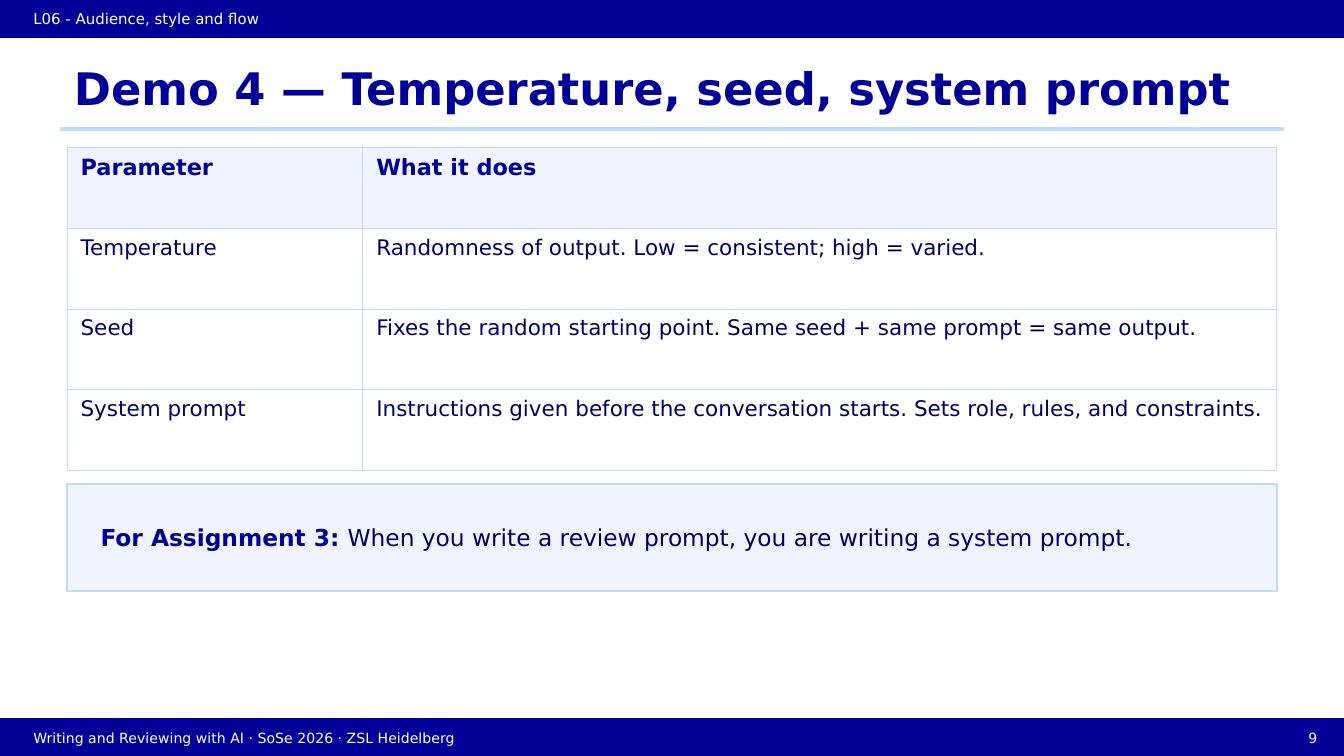
import pptx
import pptx.dml.color
import pptx.enum.shapes
import pptx.enum.text
import pptx.oxml
import pptx.oxml.ns
import pptx.util
from pptx.util import Inches

RGBColor = pptx.dml.color.RGBColor
PP_ALIGN = pptx.enum.text.PP_ALIGN
MIDDLE = pptx.enum.text.MSO_ANCHOR.MIDDLE

NAVY = RGBColor(0x00, 0x00, 0x99)
INK = RGBColor(0x00, 0x00, 0x66)
SKY = RGBColor(0xBF, 0xDB, 0xFE)
PALE = RGBColor(0xF0, 0xF4, 0xFF)
WHITE = RGBColor(0xFF, 0xFF, 0xFF)

ROWS = [
    ("Parameter", "What it does"),
    ("Temperature", "Randomness of output. Low = consistent; high = varied."),
    ("Seed", "Fixes the random starting point. Same seed + same prompt = same output."),
    ("System prompt", "Instructions given before the conversation starts. "
                      "Sets role, rules, and constraints."),
]


class Deck:
    font = "DejaVu Sans"

    def __init__(self, width, height):
        self.prs = pptx.Presentation()
        self.prs.slide_width = Inches(width)
        self.prs.slide_height = Inches(height)
        self.s = self.prs.slides.add_slide(self.prs.slide_layouts[5])

    def style(self, font, size, color, bold=False):
        font.name = self.font
        font.size = pptx.util.Pt(size)
        font.color.rgb = color
        font.bold = bold

    def title(self, x, y, w, h, text, size):
        sp = self.s.shapes.title
        sp.left, sp.top, sp.width, sp.height = map(Inches, (x, y, w, h))
        tf = sp.text_frame
        tf.text = text
        tf.word_wrap = True
        tf.auto_size = pptx.enum.text.MSO_AUTO_SIZE.NONE
        tf.vertical_anchor = MIDDLE
        p = tf.paragraphs[0]
        p.alignment = PP_ALIGN.LEFT
        self.style(p.font, size, NAVY, True)

    def rect(self, x, y, w, h, fill, line):
        sp = self.s.shapes.add_shape(
            pptx.enum.shapes.MSO_SHAPE.RECTANGLE, *map(Inches, (x, y, w, h)))
        sp.shadow.inherit = False
        sp.fill.solid()
        sp.fill.fore_color.rgb = fill
        sp.line.color.rgb = line
        sp.line.width = pptx.util.Pt(1)

    def text(self, x, y, w, h, runs, size, align=PP_ALIGN.LEFT):
        tf = self.s.shapes.add_textbox(*map(Inches, (x, y, w, h))).text_frame
        tf.word_wrap = True
        tf.vertical_anchor = MIDDLE
        p = tf.paragraphs[0]
        p.alignment = align
        for text, color, bold in runs:
            r = p.add_run()
            r.text = text
            self.style(r.font if len(runs) > 1 else p.font, size, color, bold)

    def borders(self, cell, color, points):
        tcPr = cell._tc.get_or_add_tcPr()
        for i, side in enumerate(("lnL", "lnR", "lnT", "lnB")):
            ln = pptx.oxml.parse_xml(
                f'<a:{side} {pptx.oxml.ns.nsdecls("a")} w="{pptx.util.Pt(points)}">'
                f'<a:solidFill><a:srgbClr val="{color}"/></a:solidFill></a:{side}>')
            tcPr.insert(i, ln)

    def table(self, x, y, widths, row_height, rows):
        tbl = self.s.shapes.add_table(
            len(rows), len(widths), Inches(x), Inches(y),
            Inches(sum(widths)), Inches(row_height * len(rows))).table
        for col, width in zip(tbl.columns, widths):
            col.width = Inches(width)
        for i, row in enumerate(rows):
            head = i == 0
            for j, text in enumerate(row):
                cell = tbl.cell(i, j)
                cell.text = text
                cell.fill.solid()
                cell.fill.fore_color.rgb = PALE if head else WHITE
                self.borders(cell, SKY, 0.5)
                self.style(cell.text_frame.paragraphs[0].font,
                           12 if head else 11.5, NAVY if head else INK, head)


def main():
    deck = Deck(10, 10 * 9 / 16)
    deck.title(0.45, 0.35, 9.1, 0.6, "Demo 4 — Temperature, seed, system prompt", 24)
    deck.rect(0.45, 0.95, 9.1, 0.02, SKY, SKY)
    for y in (0, 5.35):
        deck.rect(0, y, 10, 0.28, NAVY, NAVY)
    deck.text(0.15, 0, 9.7, 0.28,
              [("L06 - Audience, style and flow", WHITE, False)], 8)
    deck.text(0.15, 5.35, 8.5, 0.28,
              [("Writing and Reviewing with AI · SoSe 2026 · ZSL Heidelberg",
                WHITE, False)], 7.5)
    deck.text(9.4, 5.35, 0.5, 0.28, [("9", WHITE, False)], 7.5, PP_ALIGN.RIGHT)
    deck.table(0.5, 1.1, (2.2, 6.8), 0.6, ROWS)
    deck.rect(0.5, 3.6, 9, 0.8, PALE, SKY)
    deck.text(0.65, 3.64, 8.7, 0.72,
              [("For Assignment 3: ", NAVY, True),
               ("When you write a review prompt, you are writing a system prompt.",
                INK, False)], 12.5)
    deck.prs.save("out.pptx")


if __name__ == "__main__":
    main()
